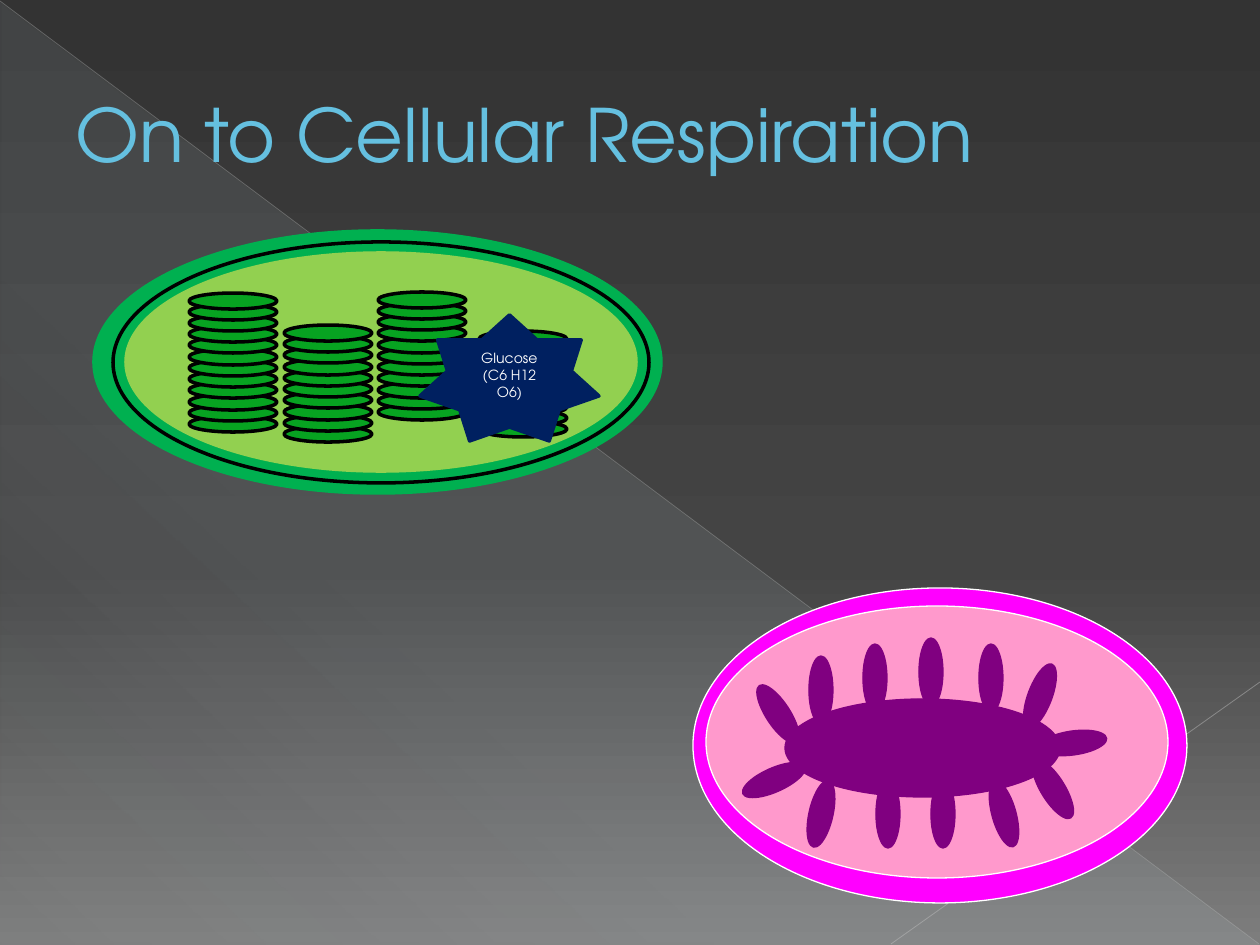
from typing import NamedTuple

from lxml.etree import SubElement
from pptx import Presentation
from pptx.dml.color import RGBColor
from pptx.enum.shapes import MSO_CONNECTOR, MSO_SHAPE
from pptx.enum.text import MSO_ANCHOR, PP_ALIGN
from pptx.oxml.ns import qn
from pptx.util import Emu, Pt

PX_PER_INCH = 126
FONT = "TeX Gyre Adventor"

WHITE = RGBColor(0xFF, 0xFF, 0xFF)
BLACK = RGBColor(0x00, 0x00, 0x00)
SKY = RGBColor(0x65, 0xC0, 0xE0)
PALE_SKY = RGBColor(0xDE, 0xF5, 0xFA)
GREEN = RGBColor(0x00, 0xB0, 0x50)
LIME = RGBColor(0x92, 0xD0, 0x50)
LEAF = RGBColor(0x07, 0xA3, 0x21)
NAVY = RGBColor(0x00, 0x20, 0x60)
MAGENTA = RGBColor(0xFF, 0x00, 0xFF)
PINK = RGBColor(0xFF, 0x99, 0xCC)
PURPLE = RGBColor(0x80, 0x00, 0x80)
DARK_GREY = RGBColor(0x33, 0x33, 0x33)
MID_GREY = RGBColor(0x44, 0x44, 0x44)
LIGHT_GREY = RGBColor(0x7D, 0x7D, 0x7D)
RAY_GREY = RGBColor(0xB9, 0xB9, 0xB9)
CORNER_GREY = RGBColor(0xC1, 0xC1, 0xC1)


class Box(NamedTuple):
    left: int
    top: int
    width: int
    height: int


class Style(NamedTuple):
    fill: RGBColor
    line: RGBColor
    weight: float


class Membrane(NamedTuple):
    box: Box
    style: Style


class Granum(NamedTuple):
    left: int
    bottom_disc: int
    discs: int


class Crista(NamedTuple):
    left: int
    top: int
    rotation: float = 0


class Stop(NamedTuple):
    position: int
    color: RGBColor
    opacity: int = 100


class Ray(NamedTuple):
    start: tuple[int, int]
    end: tuple[int, int]
    color: RGBColor
    weight: float
    opacity: int


BACKGROUND = [Stop(0, DARK_GREY), Stop(60, MID_GREY), Stop(100, LIGHT_GREY)]
SHEEN = [Stop(0, PALE_SKY, 10), Stop(70, PALE_SKY, 8), Stop(100, PALE_SKY, 1)]
RAYS = [
    Ray((0, 1), (1259, 944), RAY_GREY, 0.39, 35),
    Ray((1260, 682), (891, 944), CORNER_GREY, 0.47, 45),
]

CHLOROPLAST = [
    Membrane(Box(94, 231, 567, 262), Style(GREEN, GREEN, 2)),
    Membrane(Box(113, 242, 536, 241), Style(GREEN, BLACK, 2)),
    Membrane(Box(126, 253, 510, 218), Style(LIME, LIME, 2)),
]
DISC_STYLE = Style(LEAF, BLACK, 2)
DISC_WIDTH, DISC_HEIGHT, DISC_PITCH = 88, 16, 11.22
GRANA = [
    Granum(189, 416, 12),
    Granum(284, 426, 10),
    Granum(378, 404, 11),
    Granum(479, 421, 9),
]

MITOCHONDRION = [
    Membrane(Box(693, 588, 494, 315), Style(MAGENTA, WHITE, 0.75)),
    Membrane(Box(706, 606, 462, 272), Style(PINK, WHITE, 0.75)),
]
CRISTA_STYLE = Style(PURPLE, PURPLE, 0.75)
CRISTA_WIDTH, CRISTA_HEIGHT = 24, 68
CRISTAE = [
    Crista(876, 780), Crista(809, 780, 12.7), Crista(762, 746, 246.1),
    Crista(766, 680, 326.8), Crista(809, 656), Crista(1028, 662, 20.6),
    Crista(979, 644), Crista(863, 644), Crista(919, 638),
    Crista(1061, 709, 82.1), Crista(1041, 755, 328.3),
    Crista(992, 780, 344.4), Crista(931, 780),
]
CRISTAE_CORE = Box(785, 699, 275, 98)


def px(length: int) -> Emu:
    return Emu(round(length * 914400 / PX_PER_INCH))


def place(box: Box) -> list[Emu]:
    return [px(length) for length in box]


def set_opacity(color_element, percent: int) -> None:
    SubElement(color_element, qn("a:alpha"), val=str(percent * 1000))


def set_gradient(fill, owner, stops: list[Stop], angle: int) -> None:
    """Fill with the stops; owner is the element that holds the fill."""
    fill.gradient()
    gradient = owner.find(".//" + qn("a:gradFill"))
    for child in list(gradient):
        gradient.remove(child)
    stop_list = SubElement(gradient, qn("a:gsLst"))
    for stop in stops:
        entry = SubElement(stop_list, qn("a:gs"), pos=str(stop.position * 1000))
        color = SubElement(entry, qn("a:srgbClr"), val=str(stop.color))
        if stop.opacity < 100:
            set_opacity(color, stop.opacity)
    SubElement(gradient, qn("a:lin"), ang=str(angle * 60000), scaled="0")


def add_filled(shapes, preset, box: Box, style: Style):
    shape = shapes.add_shape(preset, *place(box))
    shape.shadow.inherit = False
    shape.fill.solid()
    shape.fill.fore_color.rgb = style.fill
    shape.line.color.rgb = style.line
    shape.line.width = Pt(style.weight)
    return shape


def add_ellipse(shapes, box: Box, style: Style):
    return add_filled(shapes, MSO_SHAPE.OVAL, box, style)


def add_ray(shapes, ray: Ray) -> None:
    line = shapes.add_connector(
        MSO_CONNECTOR.STRAIGHT, *(px(v) for v in ray.start + ray.end))
    line.line.color.rgb = ray.color
    line.line.width = Pt(ray.weight)
    set_opacity(line.element.find(".//" + qn("a:srgbClr")), ray.opacity)
    SubElement(line.element.spPr, qn("a:effectLst"))


def write(shape, text: str, size: int, color: RGBColor, align) -> None:
    frame = shape.text_frame
    frame.word_wrap = True
    frame.vertical_anchor = MSO_ANCHOR.MIDDLE
    frame.text = text
    for paragraph in frame.paragraphs:
        paragraph.alignment = align
        for run in paragraph.runs:
            run.font.name = FONT
            run.font.size = Pt(size)
            run.font.color.rgb = color


def add_backdrop(slide) -> None:
    set_gradient(slide.background.fill, slide.element, BACKGROUND, 90)
    sheen = slide.shapes.add_shape(
        MSO_SHAPE.RIGHT_TRIANGLE, *place(Box(1, 2, 1259, 943)))
    sheen.shadow.inherit = False
    set_gradient(sheen.fill, sheen.element, SHEEN, 133)
    sheen.line.fill.background()
    for ray in RAYS:
        add_ray(slide.shapes, ray)


def add_chloroplast(slide) -> None:
    parts = slide.shapes.add_group_shape().shapes
    for membrane in CHLOROPLAST:
        add_ellipse(parts, membrane.box, membrane.style)
    for granum in GRANA:
        for level in range(granum.discs):
            top = round(granum.bottom_disc - level * DISC_PITCH)
            add_ellipse(parts, Box(granum.left, top, DISC_WIDTH, DISC_HEIGHT), DISC_STYLE)


def add_mitochondrion(slide) -> None:
    parts = slide.shapes.add_group_shape().shapes
    for membrane in MITOCHONDRION:
        add_ellipse(parts, membrane.box, membrane.style)
    for crista in CRISTAE:
        box = Box(crista.left, crista.top, CRISTA_WIDTH, CRISTA_HEIGHT)
        add_ellipse(parts, box, CRISTA_STYLE).rotation = crista.rotation
    add_ellipse(parts, CRISTAE_CORE, CRISTA_STYLE)


def main() -> None:
    deck = Presentation()
    deck.slide_width, deck.slide_height = px(1260), px(945)
    slide = deck.slides.add_slide(deck.slide_layouts[6])
    add_backdrop(slide)
    title = slide.shapes.add_textbox(*place(Box(63, 37, 1134, 193)))
    write(title, "On to Cellular Respiration", 42, SKY, PP_ALIGN.LEFT)
    add_chloroplast(slide)
    add_mitochondrion(slide)
    glucose = add_filled(slide.shapes, MSO_SHAPE.STAR_7_POINT,
                         Box(420, 315, 179, 126), Style(NAVY, NAVY, 2))
    write(glucose, "Glucose\n(C6 H12 O6)", 8, WHITE, PP_ALIGN.CENTER)
    deck.save("out.pptx")


if __name__ == "__main__":
    main()
